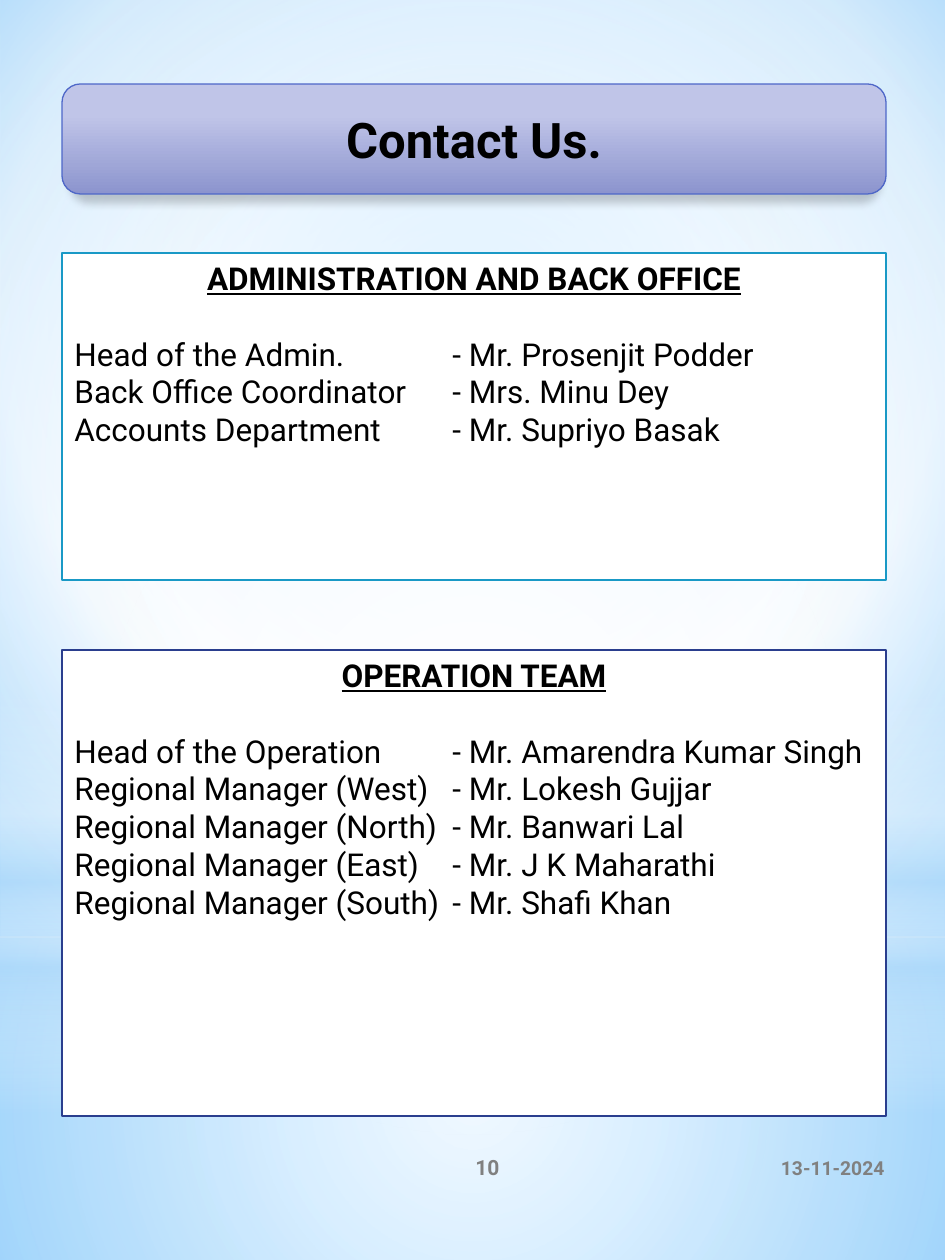
import lxml.etree
import pptx
import pptx.dml.color
import pptx.enum.shapes
import pptx.enum.text
import pptx.oxml.ns
import pptx.util

PX = 914400 / 126
FONT = "Roboto"
ALIGN = pptx.enum.text.PP_ALIGN
ANCHOR = pptx.enum.text.MSO_ANCHOR
SHAPE = pptx.enum.shapes.MSO_SHAPE
qn = pptx.oxml.ns.qn
CENTRE = (50, 50, 50, 50)

ADMIN_TEAM = [
    ("Head of the Admin.", "Mr. Prosenjit Podder"),
    ("Back Office Coordinator", "Mrs. Minu Dey"),
    ("Accounts Department", "Mr. Supriyo Basak"),
]
OPERATION_TEAM = [
    ("Head of the Operation", "Mr. Amarendra Kumar Singh"),
    ("Regional Manager (West)", "Mr. Lokesh Gujjar"),
    ("Regional Manager (North)", "Mr. Banwari Lal"),
    ("Regional Manager (East)", "Mr. J K Maharathi"),
    ("Regional Manager (South)", "Mr. Shafi Khan"),
]


def px(length):
    """Turn pixels into EMU."""
    return pptx.util.Emu(round(length * PX))


def colour(value):
    """Return the colour for a hex string."""
    return pptx.dml.color.RGBColor.from_string(value)


def add_xml(parent, tag, **attributes):
    """Append a drawing element and return it."""
    values = {name: str(value) for name, value in attributes.items()}
    return lxml.etree.SubElement(parent, qn(tag), values)


def set_gradient(element, fill, stops, centre=None):
    """Fill with (position, colour, opacity) stops, circular when a centre is given."""
    fill.solid()
    solid = element.find(".//" + qn("a:solidFill"))
    gradient = solid.makeelement(qn("a:gradFill"), {"rotWithShape": "1"})
    solid.getparent().replace(solid, gradient)
    stop_list = add_xml(gradient, "a:gsLst")
    for position, value, opacity in stops:
        stop = add_xml(stop_list, "a:gs", pos=position * 1000)
        tint = add_xml(stop, "a:srgbClr", val=value)
        if opacity < 100:
            add_xml(tint, "a:alpha", val=opacity * 1000)
    if centre:
        circle = add_xml(gradient, "a:path", path="circle")
        sides = {side: part * 1000 for side, part in zip("ltrb", centre)}
        add_xml(circle, "a:fillToRect", **sides)
    else:
        add_xml(gradient, "a:lin", ang=5400000, scaled=0)


def add_shape(slide, kind, box, line=None, width=1.25):
    """Add a shape without shadow, outlined when a line colour is given."""
    shape = slide.shapes.add_shape(kind, *map(px, box))
    shape.shadow.inherit = False
    if line:
        shape.line.color.rgb = colour(line)
        shape.line.width = pptx.util.Pt(width)
    else:
        shape.line.fill.background()
    return shape


def write(paragraph, text, size, align=ALIGN.LEFT, value="000000", **formats):
    """Write one formatted run in a paragraph."""
    paragraph.alignment = align
    run = paragraph.add_run()
    run.text = text
    run.font.color.rgb = colour(value)
    formats.update(name=FONT, size=pptx.util.Pt(size))
    for name, setting in formats.items():
        setattr(run.font, name, setting)


def add_text_frame(slide, box, anchor=ANCHOR.TOP):
    """Add a wrapping text box and return its frame."""
    frame = slide.shapes.add_textbox(*map(px, box)).text_frame
    frame.word_wrap = True
    frame.vertical_anchor = anchor
    return frame


def add_backdrop(slide, box):
    """Paint the sky background and its soft glows."""
    left, top, width, height = box
    sky = [(0, "9ED5FF", 100), (60, "FFFFFF", 100), (100, "5BB9FF", 100)]
    set_gradient(slide.element, slide.background.fill, sky, (20, 10, 20, 60))
    horizon = 937
    glows = [
        (SHAPE.RECTANGLE, horizon, height - horizon,
         [(0, "FFFFFF", 91), (37, "FFFFFF", 76), (100, "B4DCFA", 79)], CENTRE),
        (SHAPE.RECTANGLE, 0, horizon,
         [(0, "FFFFFF", 89), (48, "FFFFFF", 62), (100, "B4DCFA", 79)], CENTRE),
        (SHAPE.RECTANGLE, 692, 420,
         [(0, "FFFFFF", 0), (29, "FFFFFF", 30), (45, "B4DCFA", 40),
          (55, "FFFFFF", 26), (65, "B4DCFA", 60), (100, "FFFFFF", 0)], None),
        (SHAPE.OVAL, 294, horizon, [(0, "FFFFFF", 100), (56, "FFFFFF", 0)], CENTRE),
    ]
    for kind, offset, glow_height, stops, centre in glows:
        glow = add_shape(slide, kind, (left, top + offset, width, glow_height))
        set_gradient(glow.element, glow.fill, stops, centre)


def add_title(slide, box, text):
    """Add the rounded title bar with its drop shadow."""
    bar = add_shape(slide, SHAPE.ROUNDED_RECTANGLE, box, "4E67C8", 0.75)
    set_gradient(bar.element, bar.fill, [(28, "C0C5E8", 100), (100, "8C94CE", 100)])
    effects = bar.element.find(".//" + qn("a:effectLst"))
    shadow = add_xml(effects, "a:outerShdw", blurRad=63500, dist=50800,
                     dir=5400000, sx=98000, sy=98000, rotWithShape=0)
    add_xml(add_xml(shadow, "a:srgbClr", val="000000"), "a:alpha", val=20000)
    bar.text_frame.vertical_anchor = ANCHOR.MIDDLE
    write(bar.text_frame.paragraphs[0], text, 28, ALIGN.CENTER, bold=True)


def add_team(slide, box, text_height, line, heading, members):
    """Add a framed panel with a heading and tabbed roles and names."""
    left, top, width, height = box
    panel = add_shape(slide, SHAPE.RECTANGLE, box, line)
    panel.fill.solid()
    panel.fill.fore_color.rgb = colour("FFFFFF")
    frame = add_text_frame(slide, (left, top, width, text_height))
    title = frame.paragraphs[0]
    write(title, heading, 18, ALIGN.CENTER, bold=True, underline=True)
    title.space_after = pptx.util.Pt(21.5)
    for role, name in members:
        paragraph = frame.add_paragraph()
        write(paragraph, f"{role}\t- {name}", 18)
        tabs = add_xml(paragraph._p.get_or_add_pPr(), "a:tabLst")
        add_xml(tabs, "a:tab", pos=px(378), algn="l")


def add_footer(slide, box, number, date):
    """Add the centred page number and the date at the right."""
    left, top, width, height = box
    parts = [
        (date, 11, ALIGN.RIGHT, left + width - 260, 260),
        (number, 12, ALIGN.CENTER, left + (width - 189) / 2, 189),
    ]
    for text, size, align, part_left, part_width in parts:
        frame = add_text_frame(slide, (part_left, top, part_width, height), ANCHOR.MIDDLE)
        write(frame.paragraphs[0], text, size, align, "808080", bold=True)


def main():
    """Build the contact slide and save it."""
    presentation = pptx.Presentation()
    presentation.slide_width, presentation.slide_height = px(945), px(1260)
    slide = presentation.slides.add_slide(presentation.slide_layouts[6])
    add_backdrop(slide, (0, 0, 945, 1260))
    add_title(slide, (62, 84, 824, 110), "Contact Us.")
    add_team(slide, (62, 253, 824, 327), 242, "1999C6",
             "ADMINISTRATION AND BACK OFFICE", ADMIN_TEAM)
    add_team(slide, (62, 650, 824, 466), 318, "2A3E8E",
             "OPERATION TEAM", OPERATION_TEAM)
    add_footer(slide, (78, 1134, 819, 67), "10", "13-11-2024")
    presentation.save("out.pptx")


if __name__ == "__main__":
    main()
